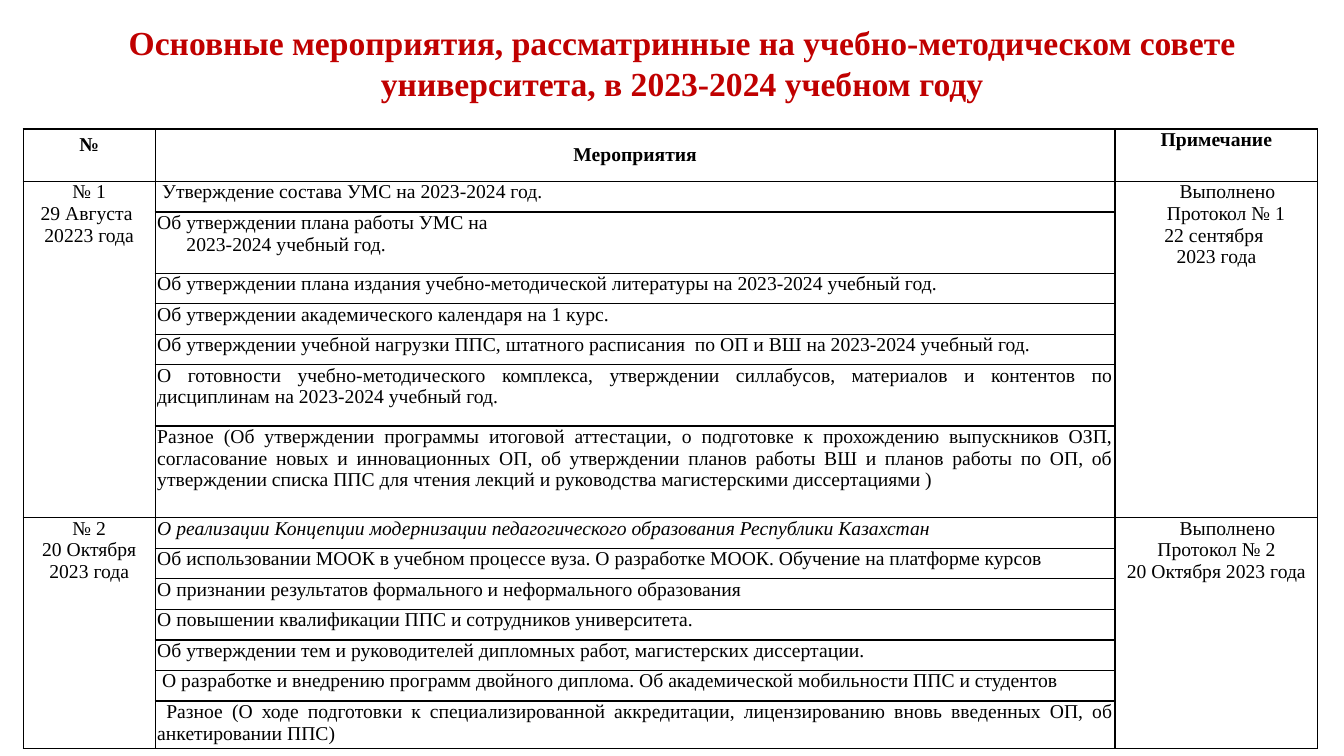
from lxml.etree import SubElement
from pptx import Presentation
from pptx.dml.color import RGBColor
from pptx.enum.text import MSO_ANCHOR as Anchor, MSO_AUTO_SIZE as AutoSize, PP_ALIGN as Align
from pptx.oxml.ns import qn
from pptx.util import Emu, Inches, Pt

FONT = "Times New Roman"
BLACK, RED = "000000", "C00000"
COLUMNS = [1.31, 9.52, 2.01]
HEADER_HEIGHT, LINE_HEIGHT, LAST_HEIGHT = 0.52, 5.16 / 17, 0.47
TITLE = ("Основные мероприятия, рассматринные на учебно-методическом совете "
         "университета, в 2023-2024 учебном году")
MEETINGS = [
    {
        "date": ["№ 1", "29 Августа ", "20223 года"],
        "agenda": [
            (1, [" Утверждение состава УМС на 2023-2024 год."]),
            (2, ["Об утверждении плана работы УМС на ",
                 ("2023-2024 учебный год.", 0.29)]),
            (1, ["Об утверждении плана издания учебно-методической литературы "
                 "на 2023-2024 учебный год."]),
            (1, ["Об утверждении академического календаря на 1 курс."]),
            (1, ["Об утверждении учебной нагрузки ППС, штатного расписания "
                 " по ОП и ВШ на 2023-2024 учебный год. "]),
            (2, ["О готовности учебно-методического комплекса, утверждении силлабусов, "
                 "материалов и контентов по дисциплинам на 2023-2024 учебный год."]),
            (3, ["Разное (Об утверждении программы итоговой аттестации, о подготовке "
                 "к прохождению выпускников ОЗП, согласование новых и инновационных ОП, "
                 "об утверждении планов работы ВШ и планов работы по ОП, об утверждении "
                 "списка ППС для чтения лекций и руководства магистерскими диссертациями ) "]),
        ],
        "note": [("Выполнено", 0.22), ("Протокол № 1", 0.19), "22 сентября ", "2023 года"],
    },
    {
        "date": ["№ 2", "20 Октября 2023 года"],
        "agenda": [
            (1, ["О реализации Концепции модернизации педагогического образования "
                 "Республики Казахстан"]),
            (1, ["Об использовании МООК в учебном процессе вуза. О разработке МООК. "
                 "Обучение на платформе курсов"]),
            (1, ["О признании результатов формального и неформального образования"]),
            (1, ["О повышении квалификации ППС и сотрудников университета."]),
            (1, ["Об утверждении тем и руководителей дипломных работ, "
                 "магистерских диссертации."]),
            (1, [" О разработке и внедрению программ двойного диплома. "
                 "Об академической мобильности ППС и студентов"]),
            (1, [" Разное (О ходе подготовки к специализированной аккредитации, "
                 "лицензированию вновь введенных ОП, об анкетировании ППС) "]),
        ],
        "note": [("Выполнено", 0.22), "Протокол № 2", "20 Октября 2023 года"],
    },
]


def color(hex_value):
    return RGBColor.from_string(hex_value)


def write(frame, lines, align, size=14, ink=BLACK, bold=False, italic=False):
    for number, line in enumerate(lines):
        text, indent = line if isinstance(line, tuple) else (line, 0)
        paragraph = frame.paragraphs[0] if number == 0 else frame.add_paragraph()
        paragraph.alignment = align
        properties = paragraph._p.get_or_add_pPr()
        properties.set("marL", str(Inches(indent)))
        properties.set("indent", "0")
        run = paragraph.add_run()
        run.text = text
        font = run.font
        font.name, font.size, font.bold, font.italic = FONT, Pt(size), bold, italic
        font.color.rgb = color(ink)


def style_cell(cell):
    cell.margin_left = cell.margin_right = Inches(0.02)
    cell.margin_top = cell.margin_bottom = 0
    cell.vertical_anchor = Anchor.TOP
    properties = cell._tc.get_or_add_tcPr()
    for side in ("lnL", "lnR", "lnT", "lnB"):
        border = SubElement(properties, qn(f"a:{side}"), w=str(Pt(1)))
        SubElement(SubElement(border, qn("a:solidFill")), qn("a:srgbClr"), val=BLACK)
    cell.fill.background()


def add_title(slide, width, height):
    box = slide.shapes.add_textbox(Emu(int(width * 0.061)), Emu(int(height * 0.023)),
                                   Emu(int(width * 0.893)), Emu(int(height * 0.121)))
    frame = box.text_frame
    frame.word_wrap = True
    frame.auto_size = AutoSize.SHAPE_TO_FIT_TEXT
    write(frame, [TITLE], Align.CENTER, size=24, ink=RED, bold=True)


def add_schedule(slide):
    lines = [count for meeting in MEETINGS for count, _ in meeting["agenda"]]
    heights = [HEADER_HEIGHT] + [LINE_HEIGHT * count for count in lines[:-1]] + [LAST_HEIGHT]
    frame = slide.shapes.add_table(len(heights), len(COLUMNS), Inches(0.23), Inches(1.28),
                                   Inches(sum(COLUMNS)), Inches(sum(heights)))
    schedule = frame.table
    schedule.first_row = schedule.horz_banding = False
    for column, width in zip(schedule.columns, COLUMNS):
        column.width = Inches(width)
    for row, height in zip(schedule.rows, heights):
        row.height = Inches(height)
    for cell in schedule.iter_cells():
        style_cell(cell)
    fill_header(schedule)
    top = 1
    for meeting in MEETINGS:
        fill_meeting(schedule, top, meeting)
        top += len(meeting["agenda"])


def fill_header(schedule):
    for column, heading in enumerate(["№", "Мероприятия", "Примечание"]):
        cell = schedule.cell(0, column)
        write(cell.text_frame, [heading], Align.CENTER, bold=True)
        if column < 2:
            cell.vertical_anchor = Anchor.MIDDLE
    schedule.cell(0, 0).margin_bottom = Inches(0.21)


def fill_meeting(schedule, top, meeting):
    bottom = top + len(meeting["agenda"]) - 1
    for column, part in ((0, "date"), (2, "note")):
        cell = schedule.cell(top, column)
        cell.merge(schedule.cell(bottom, column))
        write(cell.text_frame, meeting[part], Align.CENTER)
    for row, (_, topic) in enumerate(meeting["agenda"], top):
        write(schedule.cell(row, 1).text_frame, topic, Align.JUSTIFY,
              italic=topic[0].startswith("О реализации"))


def main():
    deck = Presentation()
    deck.slide_width, deck.slide_height = Inches(13.33), Inches(7.5)
    slide = deck.slides.add_slide(deck.slide_layouts[6])
    add_title(slide, deck.slide_width, deck.slide_height)
    add_schedule(slide)
    deck.save("out.pptx")


if __name__ == "__main__":
    main()
